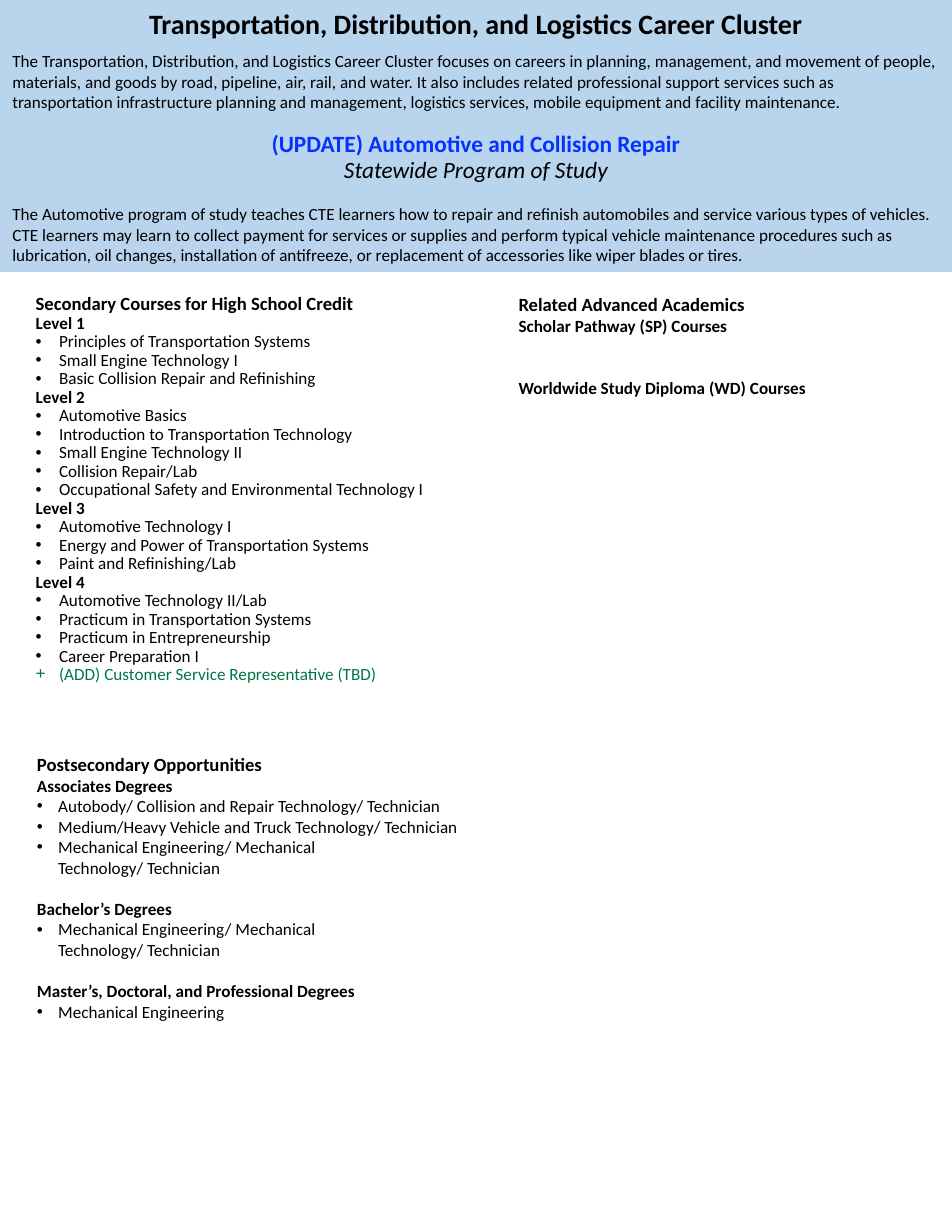
import pptx
import pptx.util
import pptx.dml.color
import pptx.enum.shapes
import pptx.enum.text
from lxml import etree

Cm, Pt = pptx.util.Cm, pptx.util.Pt
ALIGN = pptx.enum.text.PP_ALIGN
ANCHOR = pptx.enum.text.MSO_ANCHOR
COLORS = {"band": "B9D4ED", "low": "BAD4ED", "text": "000000",
          "blue": "0432FF", "green": "007742"}
WIDE, TALL = 21.59, 27.94
COL = 10.11  # column width
NB = chr(160)  # keeps two words on one line

INTRO = (
    "The Transportation, Distribution, and Logistics Career Cluster focuses on "
    "careers in planning, management, and movement of people, materials, and "
    "goods by road, pipeline, air, rail, and water. It also includes related "
    "professional support services such as transportation infrastructure "
    "planning and management, logistics services, mobile equipment and "
    "facility maintenance.")
ABOUT = (
    "The Automotive program of study teaches CTE learners how to repair and "
    "refinish automobiles and service various types of vehicles. CTE learners "
    "may learn to collect payment for services or supplies and perform typical "
    "vehicle maintenance procedures such as lubrication, oil changes, "
    "installation of antifreeze, or replacement of accessories like wiper "
    "blades or tires.")
LEVELS = {
    "Level 1": ["Principles of Transportation Systems",
                "Small Engine Technology I",
                "Basic Collision Repair and Refinishing"],
    "Level 2": ["Automotive Basics",
                "Introduction to Transportation Technology",
                "Small Engine Technology II",
                "Collision Repair/Lab",
                "Occupational Safety and Environmental Technology I"],
    "Level 3": ["Automotive Technology I",
                "Energy and Power of Transportation Systems",
                "Paint and Refinishing/Lab"],
    "Level 4": ["Automotive Technology II/Lab",
                "Practicum in Transportation Systems",
                "Practicum in Entrepreneurship",
                "Career Preparation I"],
}
MECH = f"Mechanical Engineering/ Mechanical Technology/{NB}Technician"
DEGREES = {
    "Associates Degrees": [
        "Autobody/ Collision and Repair Technology/ Technician",
        "Medium/Heavy Vehicle and Truck Technology/ Technician",
        MECH],
    "Bachelor’s Degrees": [MECH],
    "Master’s, Doctoral, and Professional Degrees": ["Mechanical Engineering"],
}


class Sheet:
    def __init__(self, slide, font="Calibri", size=11):
        self.slide, self.font, self.size = slide, font, size

    def place(self, shape, left, top, width, height):
        shape.left, shape.top = Cm(left), Cm(top)
        shape.width, shape.height = Cm(width), Cm(height)

    def paint(self, shape, color):
        shape.fill.solid()
        shape.fill.fore_color.rgb = pptx.dml.color.RGBColor.from_string(COLORS[color])

    def frame(self, shape, side, edge, anchor=ANCHOR.TOP):
        frame = shape.text_frame
        frame.word_wrap = True
        frame.auto_size = pptx.enum.text.MSO_AUTO_SIZE.NONE
        frame.vertical_anchor = anchor
        frame.margin_left = frame.margin_right = Cm(side)
        frame.margin_top = frame.margin_bottom = Cm(edge)
        return frame

    def title(self, top, height):
        shape = self.slide.shapes.title
        self.place(shape, 0, top, WIDE, height)
        self.paint(shape, "band")
        return self.frame(shape, 0.25, 0.13, ANCHOR.MIDDLE)

    def band(self, top, height, color):
        shape = self.slide.shapes.add_shape(
            pptx.enum.shapes.MSO_SHAPE.RECTANGLE,
            Cm(0), Cm(top), Cm(WIDE), Cm(height))
        shape.shadow.inherit = False
        shape.line.fill.background()
        self.paint(shape, color)
        return self.frame(shape, 0.28, 0.15)

    def box(self, left, top, height, side=0.28, edge=0.15):
        shape = self.slide.shapes.add_textbox(Cm(left), Cm(top), Cm(COL), Cm(height))
        return self.frame(shape, side, edge)

    def para(self, frame, text, size=None, bold=False, italic=False, color="text",
             align=ALIGN.LEFT, line=1.0, before=0, after=0):
        para = frame.paragraphs[0]
        if para.runs:
            para = frame.add_paragraph()
        para.alignment, para.line_spacing = align, line
        para.space_before, para.space_after = Pt(before), Pt(after)
        run = para.add_run()
        run.text = text
        font = run.font
        font.name, font.size = self.font, Pt(size or self.size)
        font.bold, font.italic = bold, italic
        font.color.rgb = pptx.dml.color.RGBColor.from_string(COLORS[color])
        return para

    def bullet(self, frame, text, indent, mark="•", **style):
        props = self.para(frame, text, **style)._p.get_or_add_pPr()
        props.set("marL", str(Cm(indent)))
        props.set("indent", str(-Cm(indent)))
        space = pptx.oxml.ns.qn
        etree.SubElement(props, space("a:buFont")).set("typeface", "Arial")
        etree.SubElement(props, space("a:buChar")).set("char", mark)

    def groups(self, frame, groups, indent, gap=0, line=1.0):
        for num, (head, items) in enumerate(groups.items()):
            self.para(frame, head, bold=True, line=line, before=gap if num else 0)
            for item in items:
                self.bullet(frame, item, indent, line=line)


def main():
    deck = pptx.Presentation()
    deck.slide_width, deck.slide_height = Cm(WIDE), Cm(TALL)
    sheet = Sheet(deck.slides.add_slide(deck.slide_layouts[5]))

    # Program title
    frame = sheet.title(2.69, 1.78)
    sheet.para(frame, "(UPDATE) Automotive and Collision Repair", 15, bold=True,
               color="blue", align=ALIGN.CENTER, line=0.9)
    sheet.para(frame, "Statewide Program of Study", 15, italic=True,
               align=ALIGN.CENTER, line=0.9)

    # Cluster and program descriptions
    frame = sheet.band(0, 2.72, "band")
    sheet.para(frame, "Transportation, Distribution, and Logistics Career Cluster",
               18, bold=True, align=ALIGN.CENTER, after=6.6)
    sheet.para(frame, INTRO)
    sheet.para(sheet.band(4.47, 1.7, "low"), ABOUT)

    # Secondary courses
    frame = sheet.box(0.56, 6.5, 10.08, 0.25, 0.13)
    sheet.para(frame, "Secondary Courses for High School Credit", 12, bold=True)
    sheet.groups(frame, LEVELS, 0.53, line=0.9)
    sheet.bullet(frame, "(ADD) Customer Service Representative (TBD)", 0.53, "+",
                 color="green", line=0.9)

    # Advanced academics
    frame = sheet.box(11.48, 6.5, 3.86)
    sheet.para(frame, "Related Advanced Academics", 12, bold=True)
    sheet.para(frame, "Scholar Pathway (SP) Courses", bold=True)
    sheet.para(frame, "Worldwide Study Diploma (WD) Courses", bold=True,
               before=26.4)

    # Postsecondary degrees
    frame = sheet.box(0.56, 16.92, 7.11)
    sheet.para(frame, "Postsecondary Opportunities", 12, bold=True)
    sheet.groups(frame, DEGREES, 0.48, gap=13.2)

    deck.save("out.pptx")


if __name__ == "__main__":
    main()
